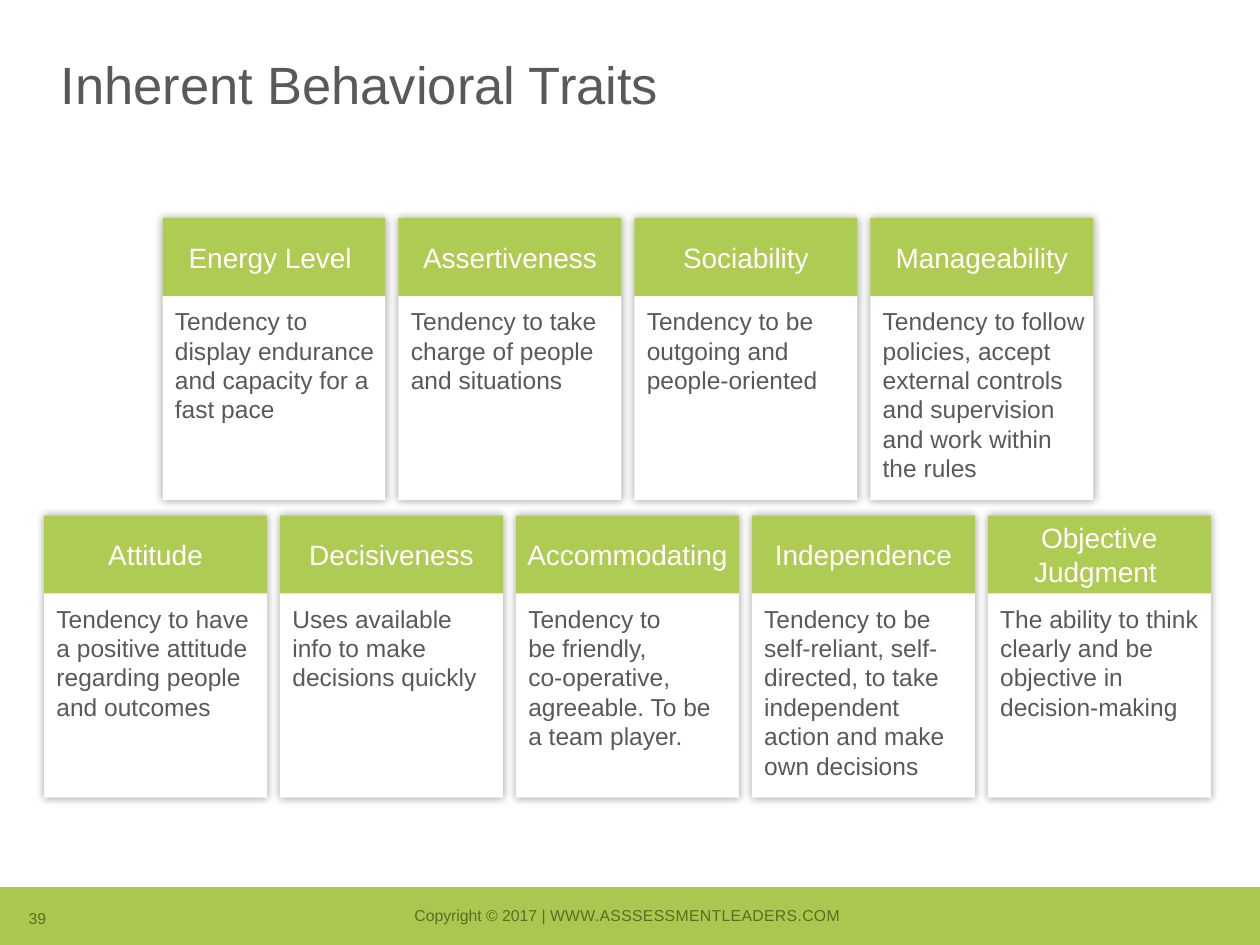
from lxml.etree import SubElement as Sub
from pptx import Presentation
from pptx.dml.color import RGBColor
from pptx.enum.shapes import MSO_SHAPE as Shape
from pptx.enum.text import MSO_ANCHOR as Anchor, PP_ALIGN as Align
from pptx.oxml.ns import qn
from pptx.util import Inches, Pt

WHITE = RGBColor(0xFF, 0xFF, 0xFF)
BLACK = RGBColor(0, 0, 0)
BAND = RGBColor(0xAA, 0xC7, 0x50)
GREEN = RGBColor(0xAE, 0xCB, 0x54)
OLIVE = RGBColor(0x5B, 0x6E, 0x21)
GRAY = RGBColor(0x59, 0x59, 0x59)

CARD_W, CARD_H, HEAD_H, STEP = 1.77, 2.24, 0.62, 1.8725

# Each row: left, top, right inset of the body text, cards
ROWS = [
    (1.29, 1.73, 0, [
        ("Energy Level ", "Tendency to display endurance and capacity for a fast pace"),
        ("Assertiveness", "Tendency to take charge of people and situations"),
        ("Sociability", "Tendency to be outgoing and people-oriented"),
        ("Manageability", "Tendency to follow policies, accept external controls "
                          "and supervision and work within \nthe rules"),
    ]),
    (0.35, 4.09, 0.1, [
        ("Attitude", "Tendency to have a positive attitude regarding people and outcomes"),
        ("Decisiveness", "Uses available info to make decisions quickly"),
        ("Accommodating", "Tendency to \nbe friendly, \nco-operative, agreeable. "
                          "To be a team player."),
        ("Independence", "Tendency to be self-reliant, self-directed, to take "
                         "independent action and make own decisions"),
        ("Objective Judgment ", "The ability to think clearly and be objective "
                                "in decision-making"),
    ]),
]


def style(font, size, color):
    for key, value in {"name": "Arial", "size": Pt(size)}.items():
        setattr(font, key, value)
    font.color.rgb = color


def fit(frame, anchor, insets, wrap=True):
    """Set anchor, wrap and the left, top, right and bottom insets in inches."""
    frame.word_wrap = wrap
    frame.vertical_anchor = anchor
    for side, inset in zip(("left", "top", "right", "bottom"), insets):
        setattr(frame, f"margin_{side}", Inches(inset))


def write(frame, text, size, color, align=Align.LEFT):
    para = frame.paragraphs[0]
    para.text = text
    para.alignment = align
    for run in para.runs:
        style(run.font, size, color)
    return para


def add_box(slide, at, fill):
    box = slide.shapes.add_shape(Shape.RECTANGLE, *map(Inches, at))
    box.fill.solid()
    box.fill.fore_color.rgb = fill
    box.line.fill.background()
    box.shadow.inherit = False
    return box


def add_glow(box):
    """Give the box a soft shadow, the same on all sides."""
    effects = box.element.spPr.find(qn("a:effectLst"))
    shadow = Sub(effects, qn("a:outerShdw"), blurRad=str(Pt(5)), dist="0",
                 dir="0", algn="ctr", rotWithShape="0")
    color = Sub(shadow, qn("a:srgbClr"), val=str(BLACK))
    Sub(color, qn("a:alpha"), val="40000")


def add_card(slide, left, top, inset, head, body):
    card = add_box(slide, (left, top, CARD_W, CARD_H), WHITE)
    add_glow(card)
    fit(card.text_frame, Anchor.TOP, (0.1, 0.7, inset, 0.05))
    write(card.text_frame, body, 14, GRAY)
    bar = add_box(slide, (left, top, CARD_W, HEAD_H), GREEN)
    fit(bar.text_frame, Anchor.MIDDLE, (0, 0.05, 0, 0.05))
    write(bar.text_frame, head, 16, WHITE, Align.CENTER)


def add_note(slide, at, text, align):
    frame = slide.shapes.add_textbox(*map(Inches, at)).text_frame
    fit(frame, Anchor.BOTTOM, (0.1, 0.05, 0.1, 0.05), wrap=False)
    return write(frame, text, 9, OLIVE, align)


def add_footer(slide):
    add_box(slide, (0, 7.04, 10, 0.46), BAND)
    para = add_note(slide, (3.17, 7.14, 3.65, 0.25), "Copyright © 2017 | ", Align.CENTER)
    site = para.add_run()
    site.text = "WWW.ASSSESSMENTLEADERS.COM "
    style(site.font, 9, OLIVE)
    site.font._element.set("spc", "20")
    add_note(slide, (0.13, 7.16, 0.36, 0.25), "39", Align.LEFT)


def set_title(slide, text):
    title = slide.shapes.title
    at = {"left": 0.38, "top": 0.42, "width": 9.25, "height": 0.83}
    for key, value in at.items():
        setattr(title, key, Inches(value))
    fit(title.text_frame, Anchor.TOP, (0.1, 0.05, 0.1, 0.05))
    write(title.text_frame, text, 30, GRAY).line_spacing = 0.9


def main():
    deck = Presentation()
    deck.slide_width, deck.slide_height = Inches(10), Inches(7.5)
    slide = deck.slides.add_slide(deck.slide_layouts[5])
    add_footer(slide)
    set_title(slide, "Inherent Behavioral Traits")
    for left, top, inset, cards in ROWS:
        for col, (head, body) in enumerate(cards):
            add_card(slide, left + col * STEP, top, inset, head, body)
    deck.save("out.pptx")


if __name__ == "__main__":
    main()
